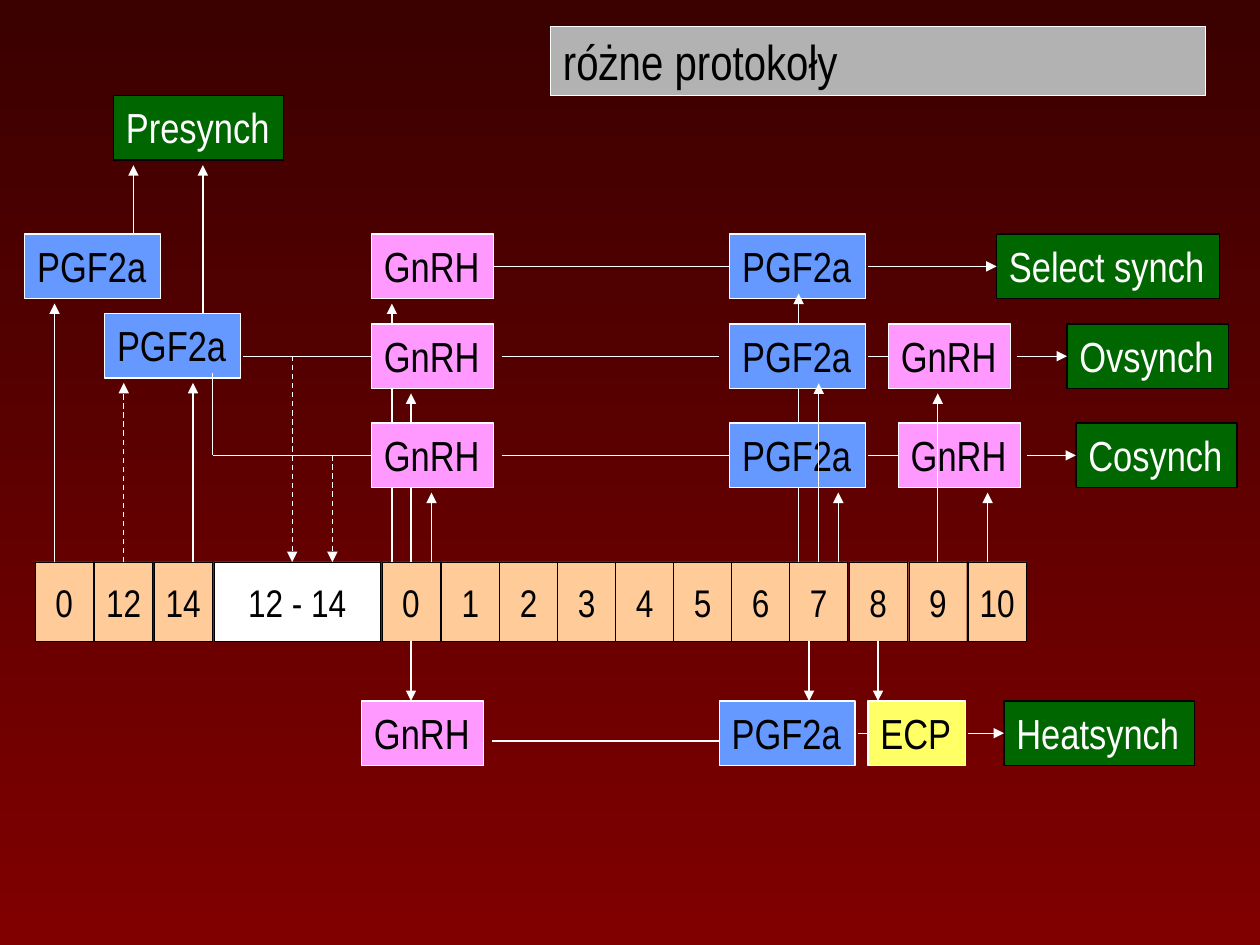
from collections import namedtuple

from lxml.etree import SubElement
from pptx import Presentation
from pptx.dml.color import RGBColor
from pptx.enum.dml import MSO_LINE
from pptx.enum.shapes import MSO_CONNECTOR, MSO_SHAPE
from pptx.enum.text import MSO_ANCHOR, MSO_AUTO_SIZE, PP_ALIGN
from pptx.oxml.ns import qn
from pptx.util import Cm, Pt

FONT = "Arial Narrow"
COLORS = {
    "top": "3B0000", "bottom": "800000", "title": "B2B2B2",
    "day": "FFCC99", "white": "FFFFFF", "black": "000000",
    "GnRH": "FF99FF", "PGF2a": "6699FF", "ECP": "FFFF66", "protocol": "006600",
}
DRUG_WIDTHS = {"GnRH": 2.46, "PGF2a": 2.74, "ECP": 1.96}
BOX_HEIGHT = 1.3
TIP_DROP = 1.4  # from the top of a box to the arrow tip below it
TOP, LEFT, BOTTOM, RIGHT = range(4)  # connection sites

Box = namedtuple("Box", "left top width height")


def color(name):
    return RGBColor.from_string(COLORS[name])


def add_box(slide, box, text, fill, size, line="white", line_width=0.75, text_color="black"):
    shape = slide.shapes.add_shape(MSO_SHAPE.RECTANGLE, *(Cm(length) for length in box))
    shape.shadow.inherit = False
    shape.fill.solid()
    shape.fill.fore_color.rgb = color(fill)
    shape.line.color.rgb = color(line)
    shape.line.width = Pt(line_width)
    paragraph = shape.text_frame.paragraphs[0]
    paragraph.alignment = PP_ALIGN.LEFT
    run = paragraph.add_run()
    run.text = text
    run.font.name = FONT
    run.font.size = Pt(size)
    run.font.color.rgb = color(text_color)
    return shape


def fit_to_text(shape):
    frame = shape.text_frame
    frame.word_wrap = False
    frame.auto_size = MSO_AUTO_SIZE.SHAPE_TO_FIT_TEXT
    frame.vertical_anchor = MSO_ANCHOR.TOP
    return shape


def add_drug(slide, left, top, name):
    box = Box(left, top, DRUG_WIDTHS[name], BOX_HEIGHT)
    return fit_to_text(add_box(slide, box, name, name, 24))


def add_protocol(slide, left, top, width, name):
    box = Box(left, top, width, BOX_HEIGHT)
    return fit_to_text(add_box(slide, box, name, "protocol", 24, "black", text_color="white"))


def center_x(shape):
    return (shape.left + shape.width / 2) / Cm(1)


def center_y(shape):
    return (shape.top + shape.height / 2) / Cm(1)


def add_link(slide, start, end, arrow=False, dashed=False):
    """Draw a line; each end is an (x, y) point or a (shape, site) pair."""
    points = [(0, 0) if hasattr(place[0], "shape_id") else place for place in (start, end)]
    connector = slide.shapes.add_connector(
        MSO_CONNECTOR.STRAIGHT, *(Cm(length) for point in points for length in point))
    for place, join in ((start, connector.begin_connect), (end, connector.end_connect)):
        if hasattr(place[0], "shape_id"):
            join(*place)
    connector.line.color.rgb = color("white")
    connector.line.width = Pt(0.75)
    if dashed:
        connector.line.dash_style = MSO_LINE.DASH
    if arrow:
        SubElement(connector.line._get_or_add_ln(), qn("a:tailEnd"), type="triangle")
    SubElement(connector._element.spPr, qn("a:effectLst"))


def add_rise(slide, origin, bottom, tip, dashed=False):
    """Draw an upward arrow from a cell's top middle, or from an x at the given bottom."""
    if hasattr(origin, "shape_id"):
        add_link(slide, (origin, TOP), (center_x(origin), tip), True, dashed)
    else:
        add_link(slide, (origin, bottom), (origin, tip), True, dashed)


def add_title(slide, box):
    shape = add_box(slide, box, "różne protokoły", "title", 28)
    shape.text_frame.word_wrap = True
    shape.text_frame.vertical_anchor = MSO_ANCHOR.MIDDLE


def add_timeline(slide, box):
    """Return the day cells from left to right."""
    blocks = [["0"], ["12"], ["14"], ["12 - 14"], ["0"], list("1234567"), ["8"], ["9"], ["10"]]
    day_width, wait_width, gap = 1.17, 3.36, 0.03
    cells, left = [], box.left
    for block in blocks:
        for label in block:
            waiting = label == "12 - 14"
            width = wait_width if waiting else day_width
            cell = add_box(slide, Box(left, box.top, width, box.height), label,
                           "white" if waiting else "day", 22, "black", 0.25)
            cell.text_frame.word_wrap = False
            cell.text_frame.vertical_anchor = MSO_ANCHOR.MIDDLE
            cell.text_frame.paragraphs[0].alignment = PP_ALIGN.CENTER
            cells.append(cell)
            left += width
        left += gap
    return cells


def add_presynch(slide, box, cells):
    left, top = box.left, box.top
    bottom = top + box.height
    first_top, second_top = top + 2.79, top + 4.39
    add_drug(slide, left, first_top, "PGF2a")
    add_drug(slide, left + 1.61, second_top, "PGF2a")
    add_protocol(slide, left + 1.79, top, 3.43, "Presynch")
    add_rise(slide, left + 0.6, bottom, first_top + TIP_DROP)
    add_rise(slide, cells[1], bottom, second_top + TIP_DROP, dashed=True)
    add_rise(slide, left + 3.39, bottom, second_top + TIP_DROP)
    add_rise(slide, left + 2.19, first_top, top + TIP_DROP)
    add_rise(slide, left + 3.59, second_top, top + TIP_DROP)


def add_column(slide, box, name, doses):
    """Stack doses (left offset, top offset, arrow origin, tip drop) back to front."""
    shapes = []
    for offset, drop, origin, tip_drop in doses:
        top = box.top + drop
        shapes.append(add_drug(slide, box.left + offset, top, name))
        add_rise(slide, origin, box.top + box.height, top + tip_drop)
    return shapes


def add_ending(slide, box, name, start):
    """Place a protocol name with the arrow that leads to it."""
    label = add_protocol(slide, box.left, box.top, box.width, name)
    add_link(slide, (start, center_y(label)), (label, LEFT), arrow=True)


def add_waiting(slide, start, gnrh, drop_x, bottom):
    """Lead from Presynch to a first GnRH, with a dashed drop to the waiting days."""
    level = center_y(gnrh)
    add_link(slide, (start, level), (gnrh, LEFT))
    add_link(slide, (drop_x, level), (drop_x, bottom), arrow=True, dashed=True)


def add_heatsynch(slide, box, cells):
    left, top = box.left, box.top + 1.2
    add_drug(slide, left, top, "GnRH")
    add_drug(slide, left + 7.21, top, "PGF2a")
    ecp = add_drug(slide, left + 10.21, top, "ECP")
    for day in (4, 12):
        add_link(slide, (cells[day], BOTTOM), (center_x(cells[day]), top), arrow=True) if day == 4 \
            else add_link(slide, (left + 9.02, box.top), (left + 9.02, top), arrow=True)
    add_link(slide, (left + 10.41, box.top), (left + 10.41, top), arrow=True)
    add_link(slide, (left + 2.62, top + 0.81), (left + 7.21, top + 0.81))
    add_link(slide, (left + 10.01, center_y(ecp)), (ecp, LEFT))
    add_ending(slide, Box(left + 12.95, top, 3.84, BOX_HEIGHT), "Heatsynch", left + 12.22)


def main():
    presentation = Presentation()
    presentation.slide_width, presentation.slide_height = Cm(25.4), Cm(19.05)
    slide = presentation.slides.add_slide(presentation.slide_layouts[6])
    background = slide.background.fill
    background.gradient()
    background.gradient_angle = 270
    for stop, name, position in zip(background.gradient_stops, ("top", "bottom"), (0, 1)):
        stop.color.rgb = color(name)
        stop.position = position

    add_title(slide, Box(11.1, 0.53, 13.21, 1.4))
    days_top, days_height, rows_top = 11.33, 1.6, 4.72
    cells = add_timeline(slide, Box(0.71, days_top, 19.98, days_height))
    day_0, day_7, day_9 = cells[4], cells[11], cells[13]
    add_presynch(slide, Box(0.5, 1.93, 5.22, days_top - 1.93), cells)

    select, ovsynch, cosynch = 0, 1.81, 3.81  # row offsets
    rows_height = days_top - rows_top
    gnrh_select, gnrh_ovsynch, gnrh_cosynch = add_column(
        slide, Box(7.49, rows_top, 2.46, rows_height), "GnRH",
        [(0, select, 7.9, TIP_DROP), (0, ovsynch, day_0, TIP_DROP), (0, cosynch, 8.7, TIP_DROP)])
    pgf_select, pgf_cosynch, pgf_ovsynch = add_column(
        slide, Box(14.71, rows_top, 2.74, rows_height), "PGF2a",
        [(0, select, 16.1, 1.2), (0, cosynch, 16.9, TIP_DROP), (0, ovsynch, day_7, 1.2)])
    last_cosynch, last_ovsynch = add_column(
        slide, Box(17.91, rows_top, 2.66, rows_height), "GnRH",
        [(0.2, cosynch, 19.91, TIP_DROP), (0, ovsynch, day_9, TIP_DROP)])

    add_link(slide, (gnrh_select, RIGHT), (pgf_select, LEFT))
    add_link(slide, (10.11, center_y(gnrh_ovsynch)), (14.5, center_y(pgf_ovsynch)))
    add_link(slide, (10.11, center_y(gnrh_cosynch)), (pgf_cosynch, LEFT))
    for last in (last_ovsynch, last_cosynch):
        add_link(slide, (17.5, center_y(last)), (last, LEFT))
    for name, left, row, width, start in (("Select synch", 20.09, select, 4.5, 17.5),
                                          ("Ovsynch", 21.51, ovsynch, 3.25, 20.5),
                                          ("Cosynch", 21.69, cosynch, 3.25, 20.7)):
        add_ending(slide, Box(left, rows_top + row, width, BOX_HEIGHT), name, start)

    add_waiting(slide, 4.9, gnrh_ovsynch, 5.89, days_top)
    add_waiting(slide, 4.29, gnrh_cosynch, 6.7, days_top)
    add_link(slide, (4.29, 7.52), (4.29, center_y(gnrh_cosynch)))
    add_heatsynch(slide, Box(7.29, days_top + days_height, 16.79, 2.5), cells)
    presentation.save("out.pptx")


if __name__ == "__main__":
    main()
